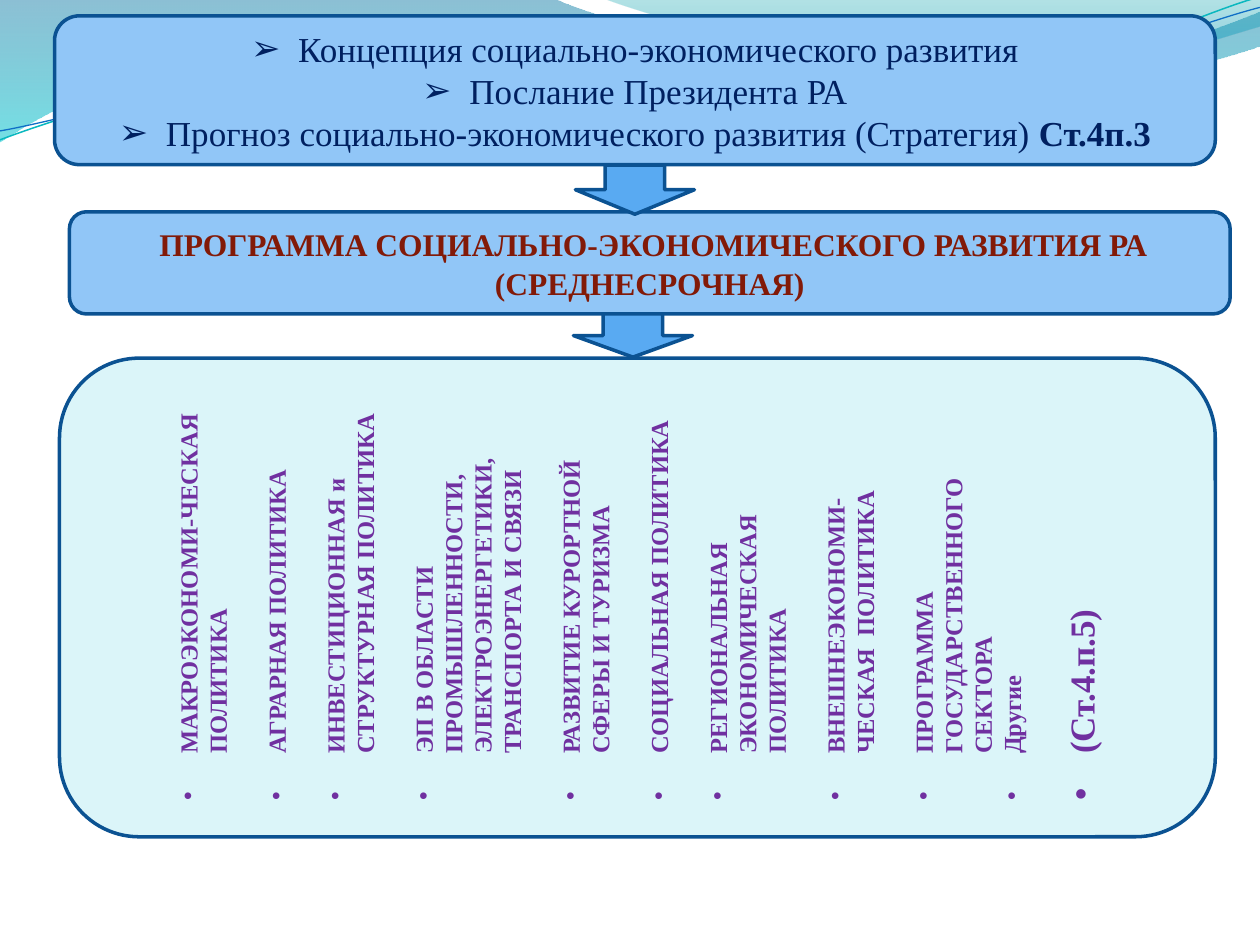
from dataclasses import dataclass
from typing import Optional

from lxml import etree
from pptx import Presentation
from pptx import util as u
from pptx.dml.color import RGBColor
from pptx.enum import shapes, text
from pptx.oxml.ns import qn

FONT = "Times New Roman"
OUTLINE = "0B5292"
HANGING = u.Cm(0.95)


@dataclass
class Stop:
    color: str
    position: float
    opacity: int


@dataclass
class Wave:
    """Start point, then steps of one point (line) or three (curve), in cm."""
    start: tuple
    steps: list
    stops: tuple = ()
    line: str = ""
    width: float = 0


@dataclass
class Item:
    spans: list  # (wording, bold)
    size: float
    color: str
    bullet: str = ""
    before: float = 0
    align: Optional[text.PP_ALIGN] = None
    line_ratio: float = 1.2


@dataclass
class Block:
    kind: shapes.MSO_SHAPE
    left: float
    top: float
    width: float
    height: float
    fill: str
    items: tuple = ()
    upward: bool = False


def rgb(value: str) -> RGBColor:
    return RGBColor.from_string(value)


def bend_lines(shape, steps: list) -> None:
    """Turn each straight segment that has control points into a curve."""
    segments = list(shape.element.iter(qn("a:lnTo")))
    for segment, step in zip(segments, steps):
        if len(step) == 1:
            continue
        segment.tag = qn("a:cubicBezTo")
        segment.clear()
        for x, y in step:
            etree.SubElement(segment, qn("a:pt"), x=str(u.Cm(x) - shape.left),
                             y=str(u.Cm(y) - shape.top))


def draw_wave(page, wave: Wave) -> None:
    points = [wave.start] + [step[-1] for step in wave.steps]
    points = [(u.Cm(x), u.Cm(y)) for x, y in points]
    builder = page.shapes.build_freeform(*points[0], scale=1.0)
    builder.add_line_segments(points[1:], close=bool(wave.stops))
    shape = builder.convert_to_shape()
    bend_lines(shape, wave.steps)
    shape.shadow.inherit = False
    if not wave.stops:
        shape.fill.background()
        shape.line.color.rgb = rgb(wave.line)
        shape.line.width = u.Pt(wave.width)
        return
    shape.line.fill.background()
    shape.fill.gradient()
    shape.fill.gradient_angle = 270
    for target, stop in zip(shape.fill.gradient_stops, wave.stops):
        target.color.rgb = rgb(stop.color)
        target.position = stop.position
    gradient = shape.element.spPr.find(qn("a:gradFill"))
    for color, stop in zip(gradient.iter(qn("a:srgbClr")), wave.stops):
        etree.SubElement(color, qn("a:alpha"), val=str(stop.opacity * 1000))


def write_item(para, item: Item) -> None:
    para.alignment = item.align
    para.line_spacing = u.Pt(item.size * item.line_ratio)
    para.space_before = u.Pt(item.before)
    for wording, bold in item.spans:
        span = para.add_run()
        span.text = wording
        span.font.bold = bold
        # Bullets take size and colour from the first run
        span.font.name = FONT
        span.font.size = u.Pt(item.size)
        span.font.color.rgb = rgb(item.color)
    if item.bullet:
        properties = para._p.get_or_add_pPr()
        properties.set("marL", str(HANGING))
        properties.set("indent", str(-HANGING))
        etree.SubElement(properties, qn("a:buFont"), typeface="Arial")
        etree.SubElement(properties, qn("a:buChar"), char=item.bullet)


def draw_block(page, block: Block) -> None:
    place = map(u.Cm, (block.left, block.top, block.width, block.height))
    shape = page.shapes.add_shape(block.kind, *place)
    shape.shadow.inherit = False
    shape.fill.solid()
    shape.fill.fore_color.rgb = rgb(block.fill)
    shape.line.color.rgb = rgb(OUTLINE)
    shape.line.width = u.Pt(2)
    box = shape.text_frame
    box.word_wrap = True
    box.vertical_anchor = text.MSO_ANCHOR.MIDDLE
    if block.upward:
        box._txBody.bodyPr.set("vert", "vert270")
    for index, item in enumerate(block.items):
        write_item(box.paragraphs[0] if index == 0 else box.add_paragraph(), item)


# Background waves
WAVES = (
    Wave((0, 0), [((11.18, -0.03),),
                  ((12.09, 0.43), (16.87, 1.6), (19.25, 1.6)),
                  ((21.67, 1.6), (24.33, 0.66), (25.4, 0.23)),
                  ((25.43, 0.91),),
                  ((24.97, 1.12), (22.1, 1.93), (18.95, 1.9)),
                  ((15.8, 1.9), (9.7, 0.71), (6.53, 0.86)),
                  ((3.28, 0.91), (1.17, 2.11), (-0.03, 2.87))],
         stops=(Stop("0074A1", 0, 45), Stop("00C6CF", 1, 55))),
    Wave((12.17, -0.03), [((12.93, 0.28), (17.32, 1.57), (19.53, 1.65)),
                          ((21.74, 1.75), (24.41, 0.81), (25.4, 0.53)),
                          ((25.4, 0),)],
         stops=(Stop("00A1A9", 0, 30), Stop("008BBF", 0.8, 45))),
    Wave((0, 2.82), [((1.22, 2.36), (4.01, 1.45), (7.04, 1.32)),
                     ((10.03, 1.19), (15.06, 2.26), (18.11, 2.03)),
                     ((21.16, 1.8), (23.83, 0.38), (25.35, -0.05))],
         line="0AB8BF", width=0.85),
    Wave((0, 2.64), [((1.19, 2.44), (4.17, 1.55), (7.19, 1.42)),
                     ((10.24, 1.3), (15.16, 2.13), (18.21, 1.9)),
                     ((21.23, 1.7), (23.9, 0.53), (25.4, 0.15))],
         line="0F6FC6", width=0.75),
)

# Wording of the three cards
CENTER, LEFT = text.PP_ALIGN.CENTER, text.PP_ALIGN.LEFT
SOURCES = tuple(Item(spans, 20, "002060", "➢", align=CENTER) for spans in (
    [("Концепция социально-экономического развития", False)],
    [("Послание Президента РА", False)],
    [("Прогноз социально-экономического развития (Стратегия) ", False),
     ("Ст.4п.3", True)],
))
PROGRAM = (Item([(" ПРОГРАММА СОЦИАЛЬНО-ЭКОНОМИЧЕСКОГО РАЗВИТИЯ РА (СРЕДНЕСРОЧНАЯ)", True)],
                18, "821A08", align=CENTER, line_ratio=1.25),)
POLICY_NAMES = (
    "МАКРОЭКОНОМИ-ЧЕСКАЯ ПОЛИТИКА",
    "АГРАРНАЯ ПОЛИТИКА",
    "ИНВЕСТИЦИОННАЯ и СТРУКТУРНАЯ ПОЛИТИКА",
    "ЭП В ОБЛАСТИ ПРОМЫШЛЕННОСТИ, ЭЛЕКТРОЭНЕРГЕТИКИ, ТРАНСПОРТА И СВЯЗИ",
    "РАЗВИТИЕ КУРОРТНОЙ СФЕРЫ И ТУРИЗМА",
    "СОЦИАЛЬНАЯ ПОЛИТИКА",
    "РЕГИОНАЛЬНАЯ ЭКОНОМИЧЕСКАЯ ПОЛИТИКА",
    "ВНЕШНЕЭКОНОМИ-ЧЕСКАЯ  ПОЛИТИКА",
    "ПРОГРАММА ГОСУДАРСТВЕННОГО СЕКТОРА",
)
PURPLE = "7030A0"
POLICIES = (
    *(Item([(name, True)], 14, PURPLE, "•", 16.8 if index else 0, LEFT)
      for index, name in enumerate(POLICY_NAMES)),
    Item([("Другие", True)], 14, PURPLE, "•", align=LEFT),
    Item([("(Ст.4.п.5)", True)], 20, PURPLE, "•", 19.2, LEFT),
)

# Cards and the arrows between them
CARD, ARROW = shapes.MSO_SHAPE.ROUNDED_RECTANGLE, shapes.MSO_SHAPE.DOWN_ARROW
BLOCKS = (
    Block(CARD, 1.1, 0.32, 23.4, 3, "91C6F7", SOURCES),
    Block(CARD, 1.4, 4.27, 23.4, 2.06, "91C6F7", PROGRAM),
    Block(ARROW, 11.6, 3.33, 2.4, 0.99, "59AAF2"),
    Block(CARD, 1.2, 7.22, 23.3, 9.65, "DBF5F9", POLICIES, upward=True),
    Block(ARROW, 11.56, 6.33, 2.4, 0.87, "59AAF2"),
)


def main() -> None:
    deck = Presentation()
    deck.slide_width, deck.slide_height = u.Cm(25.4), u.Cm(19.05)
    page = deck.slides.add_slide(deck.slide_layouts[6])
    for wave in WAVES:
        draw_wave(page, wave)
    for block in BLOCKS:
        draw_block(page, block)
    deck.save("out.pptx")


if __name__ == "__main__":
    main()
